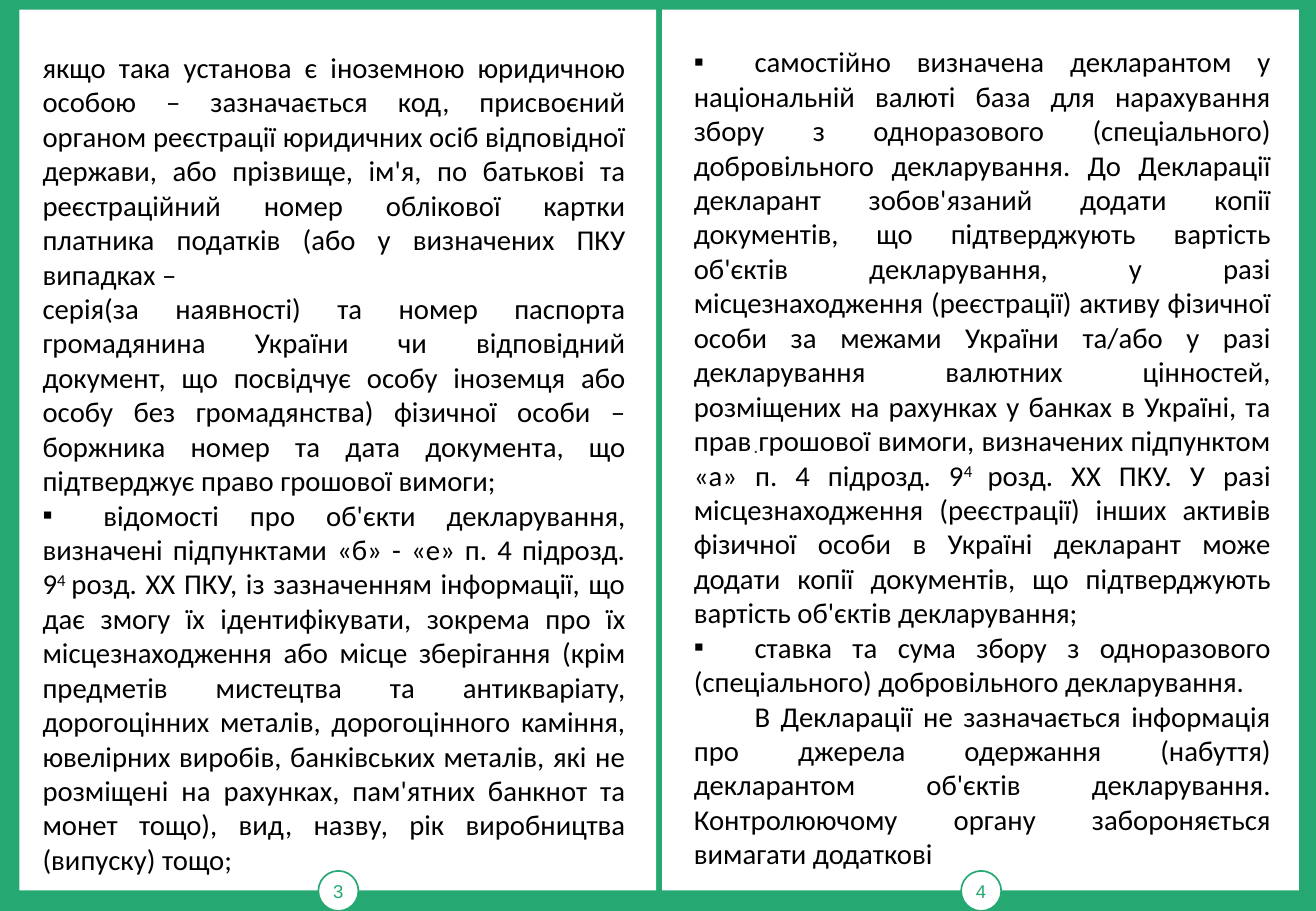
from dataclasses import dataclass

from lxml.etree import SubElement
from pptx import Presentation
from pptx.dml.color import RGBColor
from pptx.enum.shapes import MSO_SHAPE
from pptx.enum.text import MSO_ANCHOR, MSO_AUTO_SIZE, PP_ALIGN
from pptx.oxml.ns import qn
from pptx.util import Pt

EMU_PER_PX = 9144


@dataclass(frozen=True)
class Theme:
    green: RGBColor = RGBColor(0x25, 0xA8, 0x72)
    white: RGBColor = RGBColor(0xFF, 0xFF, 0xFF)
    black: RGBColor = RGBColor(0, 0, 0)
    gray: RGBColor = RGBColor(0x33, 0x33, 0x33)
    body_font: str = "Calibri"
    small_font: str = "Arial"
    body_size: int = 17
    dot_size: int = 12
    number_size: int = 11


THEME = Theme()
TAB = 50
BULLET = "▪"

LEFT_TEXT = [
    ("", 0, "якщо така установа є іноземною юридичною особою – зазначається код, "
     "присвоєний органом реєстрації юридичних осіб відповідної держави, або прізвище, "
     "ім'я, по батькові та реєстраційний номер облікової картки платника податків "
     "(або у визначених ПКУ випадках –"),
    ("", 0, "серія(за наявності) та номер паспорта громадянина України чи відповідний "
     "документ, що посвідчує особу іноземця або особу без громадянства) фізичної особи – "
     "боржника номер та дата документа, що підтверджує право грошової вимоги;"),
    (BULLET, 0, "відомості про об'єкти декларування, визначені підпунктами «б» - «е» "
     "п. 4 підрозд. 9^4 ^розд. ХХ ПКУ, із зазначенням інформації, що дає змогу їх "
     "ідентифікувати, зокрема про їх місцезнаходження або місце зберігання (крім предметів "
     "мистецтва та антикваріату, дорогоцінних металів, дорогоцінного каміння, ювелірних "
     "виробів, банківських металів, які не розміщені на рахунках, пам'ятних банкнот та "
     "монет тощо), вид, назву, рік виробництва (випуску) тощо;"),
]

RIGHT_TEXT = [
    (BULLET, 0, "самостійно визначена декларантом у національній валюті база для "
     "нарахування збору з одноразового (спеціального) добровільного декларування. "
     "До Декларації декларант зобов'язаний додати копії документів, що підтверджують "
     "вартість об'єктів декларування, у разі місцезнаходження (реєстрації) активу фізичної "
     "особи за межами України та/або у разі декларування валютних цінностей, розміщених на "
     "рахунках у банках в Україні, та прав грошової вимоги, визначених підпунктом «а» "
     "п. 4 підрозд. 9^4 ^розд. ХХ ПКУ. У разі місцезнаходження (реєстрації) інших активів "
     "фізичної особи в Україні декларант може додати копії документів, що підтверджують "
     "вартість об'єктів декларування;"),
    (BULLET, 0, "ставка та сума збору з одноразового (спеціального) добровільного "
     "декларування."),
    ("", TAB, "В Декларації не зазначається інформація про джерела одержання (набуття) "
     "декларантом об'єктів декларування. Контролюючому органу забороняється вимагати "
     "додаткові"),
]


def px(value):
    return value * EMU_PER_PX


def place(*lengths):
    return [px(length) for length in lengths]


def style_font(font, name, size, color):
    font.name = name
    font.size = Pt(size)
    font.color.rgb = color


def set_layout(para, bullet, indent):
    props = para._p.get_or_add_pPr()
    props.set("marL", "0")
    props.set("indent", str(px(indent)))
    if bullet:
        SubElement(props, qn("a:buChar"), char=bullet)
        tabs = SubElement(props, qn("a:tabLst"))
        SubElement(tabs, qn("a:tab"), pos=str(px(TAB)), algn="l")
    else:
        SubElement(props, qn("a:buNone"))
    para.alignment = PP_ALIGN.JUSTIFY
    para.space_before = Pt(0)


def add_spans(para, text):
    for index, part in enumerate(text.split("^")):
        span = para.add_run()
        span.text = part
        style_font(span.font, THEME.body_font, THEME.body_size, THEME.black)
        if index % 2:
            span._r.get_or_add_rPr().set("baseline", "30000")


def fill_column(page, box, bounds, anchor, paragraphs):
    box.left, box.top, box.width, box.height = place(*bounds)
    page.shapes.element.append(box.element)
    frame = box.text_frame
    frame.word_wrap = True
    frame.vertical_anchor = anchor
    frame.auto_size = MSO_AUTO_SIZE.SHAPE_TO_FIT_TEXT
    for index, (bullet, indent, text) in enumerate(paragraphs):
        para = frame.add_paragraph() if index else frame.paragraphs[0]
        set_layout(para, bullet, indent)
        add_spans(para, "\t" + text if bullet else text)


def add_white_shape(group, kind, bounds):
    shape = group.shapes.add_shape(kind, *place(*bounds))
    shape.shadow.inherit = False
    shape.fill.solid()
    shape.fill.fore_color.rgb = THEME.white
    return shape


def add_sheet(page, left, number):
    group = page.shapes.add_group_shape()
    sheet = add_white_shape(group, MSO_SHAPE.RECTANGLE, (left, 8, 524, 725))
    sheet.line.fill.background()
    badge = add_white_shape(group, MSO_SHAPE.OVAL, (left + 246, 717, 33, 33))
    badge.line.color.rgb = THEME.green
    badge.line.width = Pt(1)
    frame = badge.text_frame
    frame.margin_left = frame.margin_right = 0
    frame.margin_top = frame.margin_bottom = 0
    frame.vertical_anchor = MSO_ANCHOR.MIDDLE
    frame.text = str(number)
    para = frame.paragraphs[0]
    para.alignment = PP_ALIGN.CENTER
    style_font(para.runs[0].font, THEME.small_font, THEME.number_size, THEME.green)


def add_dot(page):
    box = page.shapes.add_textbox(*place(561, 23, 502, 684))
    frame = box.text_frame
    frame.word_wrap = True
    frame.vertical_anchor = MSO_ANCHOR.MIDDLE
    frame.text = "."
    para = frame.paragraphs[0]
    set_layout(para, "", 49)
    para.line_spacing = 1.15
    style_font(para.runs[0].font, THEME.small_font, THEME.dot_size, THEME.gray)


def main():
    deck = Presentation()
    deck.slide_width, deck.slide_height = place(1083, 750)
    page = deck.slides.add_slide(deck.slide_layouts[3])
    page.background.fill.solid()
    page.background.fill.fore_color.rgb = THEME.green
    title, left_box, right_box = page.placeholders
    page.shapes.element.remove(title.element)

    for index, number in enumerate((3, 4)):
        add_sheet(page, 16 + 529 * index, number)
    add_dot(page)
    fill_column(page, left_box, (25, 36, 500, 767), MSO_ANCHOR.TOP, LEFT_TEXT)
    fill_column(page, right_box, (561, 28, 495, 697), MSO_ANCHOR.MIDDLE, RIGHT_TEXT)
    deck.save("out.pptx")


if __name__ == "__main__":
    main()
